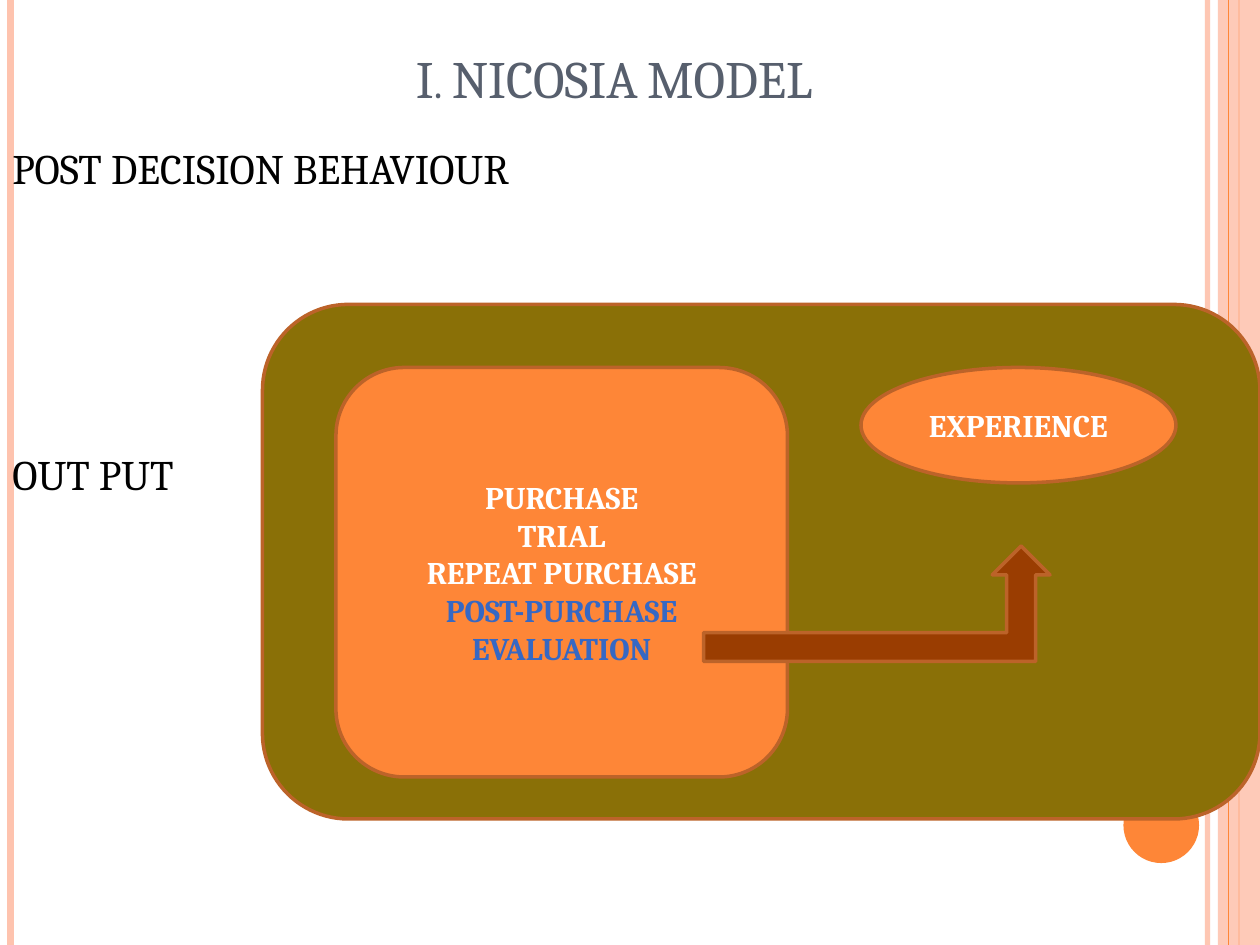
from dataclasses import dataclass

from lxml.etree import SubElement
from pptx import Presentation
from pptx.dml.color import RGBColor
from pptx.enum.shapes import MSO_CONNECTOR, MSO_SHAPE as Shape
from pptx.enum.text import MSO_ANCHOR as Anchor, PP_ALIGN as Align
from pptx.oxml.ns import qn
from pptx.util import Inches, Pt

COLS, ROWS = 120, 90  # grid of 1/12 inch cells on a 10 x 7.5 inch slide


@dataclass(frozen=True)
class Theme:
    font: str = "Cambria"
    title_size: int = 30
    body_size: int = 24
    label_size: int = 18
    title: str = "575F6D"
    body: str = "000000"
    label: str = "FFFFFF"
    accent: str = "3668C4"
    orange: str = "FE8637"
    pink: str = "FEC3AE"
    olive: str = "8A7007"
    brown: str = "9A3D01"
    outline: str = "BC6329"
    outline_width: int = 2


def grid(*cells):
    return [Inches(c / 12) for c in cells]


def set_opacity(fill_parent, percent):
    color = next(fill_parent.iter(qn("a:srgbClr")))
    SubElement(color, qn("a:alpha")).set("val", str(percent * 1000))


class SlideBuilder:
    def __init__(self, slide, theme):
        self.s, self.theme = slide, theme

    def rule(self, col, color, width, opacity=100):
        """Full-height vertical line."""
        line = self.s.shapes.add_connector(MSO_CONNECTOR.STRAIGHT, *grid(col, 0, col, ROWS))
        line.line.color.rgb = RGBColor.from_string(color)
        line.line.width = Pt(width)
        SubElement(line._element.spPr, qn("a:effectLst"))
        if opacity < 100:
            set_opacity(line._element.spPr, opacity)

    def shape(self, kind, box, color, outlined=True, opacity=100):
        sp = self.s.shapes.add_shape(kind, *grid(*box))
        sp.shadow.inherit = False
        sp.fill.solid()
        sp.fill.fore_color.rgb = RGBColor.from_string(color)
        if opacity < 100:
            set_opacity(sp._element.spPr, opacity)
        if outlined:
            sp.line.color.rgb = RGBColor.from_string(self.theme.outline)
            sp.line.width = Pt(self.theme.outline_width)
        else:
            sp.line.fill.background()
        return sp

    def text_box(self, box):
        return self.s.shapes.add_textbox(*grid(*box))

    def add_text(self, sp, lines, size, align=Align.LEFT, anchor=Anchor.TOP,
                 bold=False, small_caps=False):
        """Fill a shape with (text, colour, space before) paragraphs."""
        tf = sp.text_frame
        tf.word_wrap = True
        tf.vertical_anchor = anchor
        for i, (text, color, before) in enumerate(lines):
            p = tf.add_paragraph() if i else tf.paragraphs[0]
            p.alignment = align
            p.space_before = Pt(before)
            r = p.add_run()
            r.text = text
            r.font.name, r.font.size, r.font.bold = self.theme.font, Pt(size), bold
            r.font.color.rgb = RGBColor.from_string(color)
            if small_caps:
                r._r.get_or_add_rPr().set("cap", "small")

    def label(self, sp, lines):
        self.add_text(sp, [(text, color, 0) for text, color in lines],
                      self.theme.label_size, Align.CENTER, Anchor.MIDDLE, bold=True)


def main():
    prs = Presentation()
    prs.slide_width, prs.slide_height = grid(COLS, ROWS)
    t = Theme()
    b = SlideBuilder(prs.slides.add_slide(prs.slide_layouts[6]), t)

    # Side decoration
    b.rule(115, t.pink, 3, opacity=93)
    b.rule(1, t.pink, 4.5)
    b.rule(118, t.orange, 1.5)
    b.shape(Shape.RECTANGLE, (116, 0, 4, ROWS), t.pink, outlined=False, opacity=87)
    b.rule(117, t.orange, 0.75)
    b.shape(Shape.OVAL, (107, 75, 7.2, 7.2), t.orange, outlined=False)

    # Headings
    b.add_text(b.text_box((3, 0, 111, 11)), [("I. NICOSIA MODEL", t.title, 0)],
               t.title_size, Align.CENTER, Anchor.BOTTOM, small_caps=True)
    b.add_text(b.text_box((0, 13, COLS, 77)),
               [("POST DECISION BEHAVIOUR", t.body, 6), ("OUT PUT", t.body, 146)],
               t.body_size)

    # Model diagram
    b.shape(Shape.ROUNDED_RECTANGLE, (25, 29, 95, 49), t.olive)
    purchase = b.shape(Shape.ROUNDED_RECTANGLE, (32, 35, 43, 39), t.orange)
    b.label(purchase, [("PURCHASE", t.label), ("TRIAL", t.label),
                       ("REPEAT PURCHASE", t.label),
                       ("POST-PURCHASE EVALUATION", t.accent)])
    b.shape(Shape.BENT_UP_ARROW, (67, 52, 33, 11), t.brown)
    experience = b.shape(Shape.OVAL, (82, 35, 30, 11), t.orange)
    b.label(experience, [("EXPERIENCE", t.label)])

    prs.save("out.pptx")


if __name__ == "__main__":
    main()
